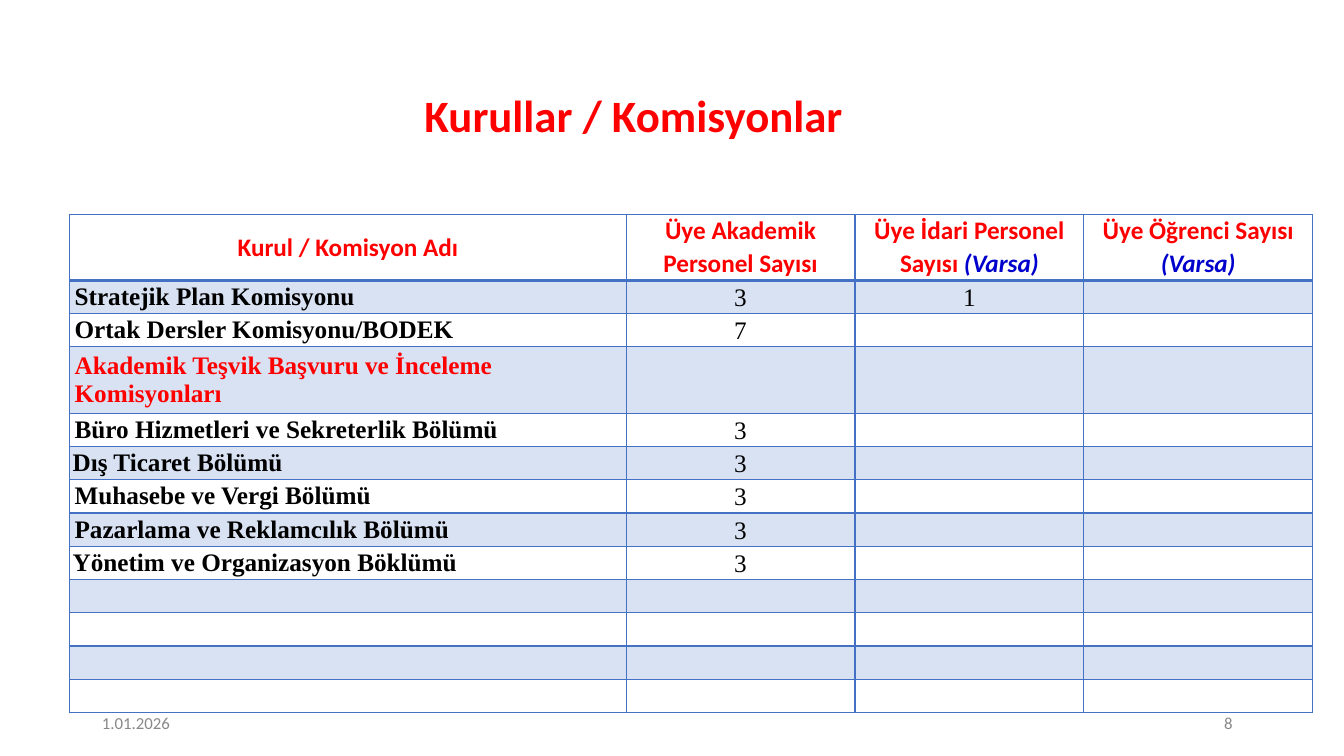
from lxml.etree import SubElement
from pptx import Presentation
from pptx.dml.color import RGBColor
from pptx.enum.text import MSO_ANCHOR, PP_ALIGN
from pptx.oxml.ns import qn
from pptx.util import Inches, Pt

COLORS = {
    "red": "FF0000",
    "note": "0000CC",
    "text": "000000",
    "footer": "888888",
    "blue": "4471C4",
}
BODY_FONT = "Times New Roman"
NOTE = "(Varsa)"

# Each heading is a list of lines
HEADINGS = [
    ["Kurul / Komisyon Adı"],
    ["Üye Akademik", "Personel Sayısı"],
    ["Üye İdari Personel", "Sayısı " + NOTE],
    ["Üye Öğrenci Sayısı", NOTE],
]
# Name, academic members, administrative members, name's left margin
COMMISSIONS = [
    ("Stratejik Plan Komisyonu", "3", "1", 0.05),
    ("Ortak Dersler Komisyonu/BODEK", "7", "", 0.05),
    ("Akademik Teşvik Başvuru ve İnceleme Komisyonları", "", "", 0.05),
    ("Büro Hizmetleri ve Sekreterlik Bölümü", "3", "", 0.05),
    ("Dış Ticaret Bölümü", "3", "", 0.03),
    ("Muhasebe ve Vergi Bölümü", "3", "", 0.05),
    ("Pazarlama ve Reklamcılık Bölümü", "3", "", 0.05),
    ("Yönetim ve Organizasyon Böklümü", "3", "", 0.03),
]
GROUP_ROW = 3
ROW_COUNT = 13
COLUMN_WIDTHS = [5.52, 2.27, 2.27, 2.27]
ROW_HEIGHTS = [0.65, 0.33, 0.33, 0.66] + [0.33] * 9


def add_text(paragraph, text, size=18, font="Calibri", color="text",
             bold=False, italic=False):
    run = paragraph.add_run()
    run.text = text
    run.font.size = Pt(size)
    run.font.name = font
    run.font.bold = bold
    run.font.italic = italic
    run.font.color.rgb = RGBColor.from_string(COLORS[color])


class SlideBuilder:
    def __init__(self, slide):
        self.slide = slide

    def label(self, text, left, top, width, height, indent=0.0, inset=0.0, **style):
        box = self.slide.shapes.add_textbox(
            Inches(left), Inches(top), Inches(width), Inches(height))
        frame = box.text_frame
        frame.word_wrap = True
        frame.margin_left = Inches(indent)
        frame.margin_top = Inches(inset)
        frame.margin_right = frame.margin_bottom = 0
        add_text(frame.paragraphs[0], text, **style)

    def table(self, left, top):
        grid = self.slide.shapes.add_table(
            ROW_COUNT, len(COLUMN_WIDTHS), Inches(left), Inches(top),
            Inches(sum(COLUMN_WIDTHS)), Inches(sum(ROW_HEIGHTS))).table
        grid.first_row = grid.horz_banding = False
        for column, width in zip(grid.columns, COLUMN_WIDTHS):
            column.width = Inches(width)
        for index, (row, height) in enumerate(zip(grid.rows, ROW_HEIGHTS)):
            row.height = Inches(height)
            for cell in row.cells:
                self.style_cell(cell, index)
        return grid

    def style_cell(self, cell, row):
        cell.margin_left = cell.margin_right = Inches(0.01)
        cell.margin_top = cell.margin_bottom = 0
        cell.vertical_anchor = MSO_ANCHOR.MIDDLE
        heavy_side = {0: "lnB", 1: "lnT"}.get(row)
        for side in ("lnL", "lnR", "lnT", "lnB"):
            width = Pt(2.25 if side == heavy_side else 1)
            line = SubElement(cell._tc.get_or_add_tcPr(), qn(f"a:{side}"), w=str(width))
            fill = SubElement(line, qn("a:solidFill"))
            SubElement(fill, qn("a:srgbClr"), val=COLORS["blue"])
        if row % 2:
            cell.fill.solid()
            cell.fill.fore_color.rgb = RGBColor.from_string(COLORS["blue"])
            tint = cell._tc.tcPr.find(qn("a:solidFill")).find(qn("a:srgbClr"))
            SubElement(tint, qn("a:alpha"), val="20000")
        else:
            cell.fill.background()

    def heading(self, cell, lines):
        for index, line in enumerate(lines):
            frame = cell.text_frame
            paragraph = frame.add_paragraph() if index else frame.paragraphs[0]
            paragraph.alignment = PP_ALIGN.CENTER
            if index:
                paragraph.space_before = Pt(1.6)
            words, note, _ = line.partition(NOTE)
            if words:
                add_text(paragraph, words, color="red", bold=True)
            if note:
                add_text(paragraph, note, color="note", bold=True, italic=True)

    def name(self, cell, text, margin, color):
        cell.margin_left, cell.margin_right = Inches(margin), Inches(0.05)
        add_text(cell.text_frame.paragraphs[0], text, font=BODY_FONT,
                 color=color, bold=True)

    def count(self, cell, text):
        paragraph = cell.text_frame.paragraphs[0]
        paragraph.alignment = PP_ALIGN.CENTER
        paragraph.line_spacing = 1.07
        add_text(paragraph, text, font=BODY_FONT)


def main():
    deck = Presentation()
    deck.slide_width, deck.slide_height = Inches(13.33), Inches(7.5)
    builder = SlideBuilder(deck.slides.add_slide(deck.slide_layouts[6]))

    # Title
    builder.label("Kurullar / Komisyonlar", 0.36, 0.65, 11.42, 1.04,
                  indent=3.85, inset=0.22, size=32, color="red", bold=True)

    # Commissions table
    commissions = builder.table(0.69, 2.13)
    for column, lines in enumerate(HEADINGS):
        builder.heading(commissions.cell(0, column), lines)
    for row, (name, academic, administrative, margin) in enumerate(COMMISSIONS, 1):
        color = "red" if row == GROUP_ROW else "text"
        builder.name(commissions.cell(row, 0), name, margin, color)
        for column, members in enumerate((academic, administrative), 1):
            if members:
                builder.count(commissions.cell(row, column), members)

    # Date and slide number
    for text, left, width, indent in (("1.01.2026", 1, 0.71, 0.01), ("8", 12.1, 0.27, 0.04)):
        builder.label(text, left, 7.07, width, 0.2, indent=indent, size=12, color="footer")

    deck.save("out.pptx")


if __name__ == "__main__":
    main()
